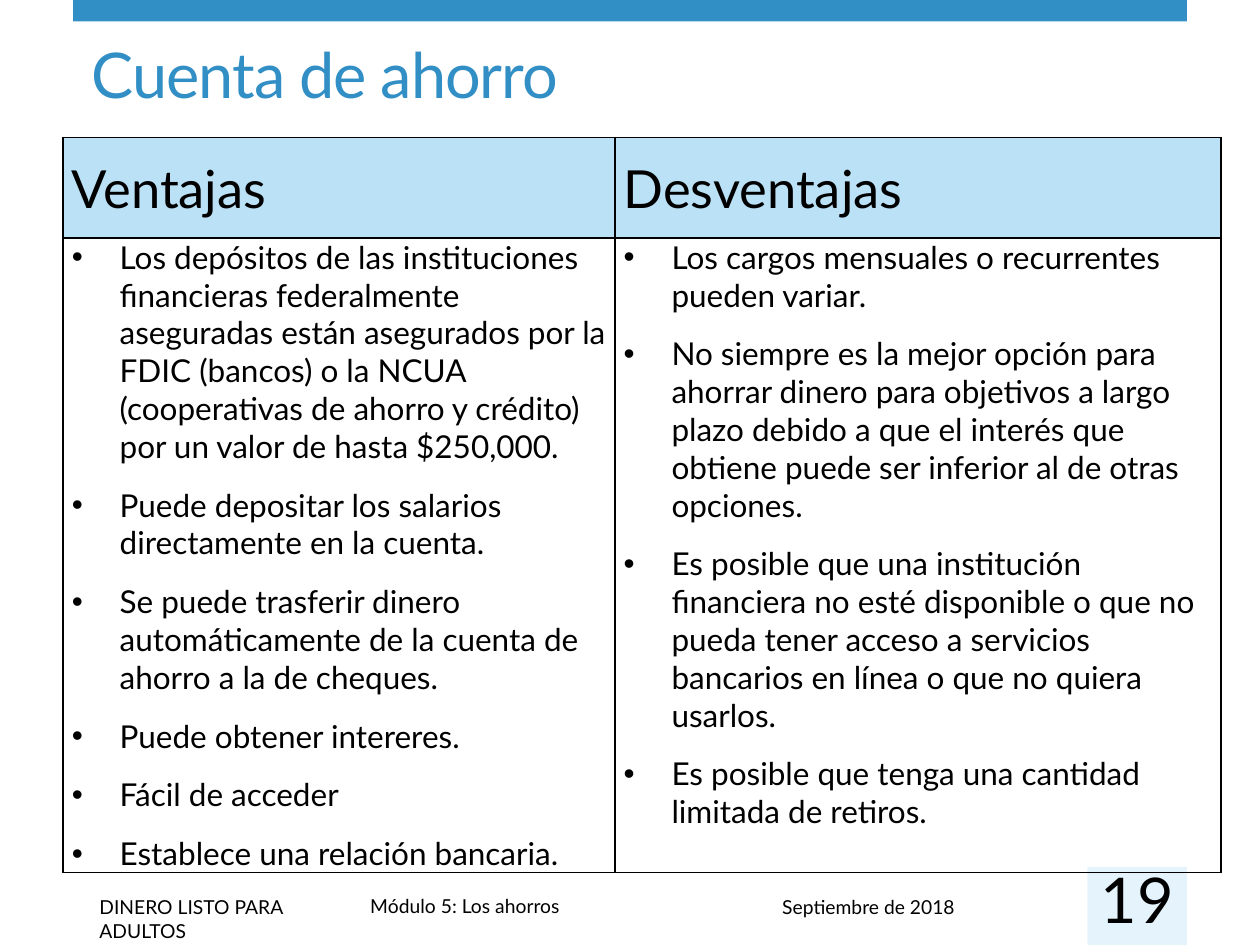
from lxml.etree import SubElement
from pptx import Presentation
from pptx.dml.color import RGBColor
from pptx.enum.shapes import MSO_SHAPE
from pptx.enum.text import MSO_ANCHOR, MSO_AUTO_SIZE, PP_ALIGN
from pptx.oxml.ns import qn
from pptx.util import Inches, Pt

FONT = "Lato"
BLUE, PALE, HEAD, BLACK = "318FC5", "E4F3FC", "76C5EF", "000000"
WIDE, HIGH = 10, 7.5
EDGE = 0.58          # side margin of the top bar
BADGE = 0.79         # width of the page number block
PAGE = WIDE - EDGE - BADGE

TITLE = "Cuenta de ahorro"
COLUMNS = [
    ("Ventajas", 4.38, [
        "Los depósitos de las instituciones financieras federalmente aseguradas "
        "están asegurados por la FDIC (bancos) o la NCUA (cooperativas de ahorro "
        "y crédito) por un valor de hasta $250,000.",
        "Puede depositar los salarios directamente en la cuenta.",
        "Se puede trasferir dinero automáticamente de la cuenta de ahorro a la de cheques.",
        "Puede obtener intereres.",
        "Fácil de acceder",
        "Establece una relación bancaria.",
    ]),
    ("Desventajas", 4.81, [
        "Los cargos mensuales o recurrentes pueden variar.",
        "No siempre es la mejor opción para ahorrar dinero para objetivos a largo "
        "plazo debido a que el interés que obtiene puede ser inferior al de otras opciones.",
        "Es posible que una institución financiera no esté disponible o que no pueda "
        "tener acceso a servicios bancarios en línea o que no quiera usarlos.",
        "Es posible que tenga una cantidad limitada de retiros.",
    ]),
]
ROWS = (0.8, 4.94)
FOOTER = [  # text, left, top, width
    ("DINERO LISTO PARA ADULTOS", 0.69, 7.06, 2.09),
    ("Módulo\u00a05: Los ahorros", 2.84, 7.05, 5.66),
    ("Septiembre de 2018", 6.11, 7.06, 2.52),
]


def color(code):
    return RGBColor.from_string(code)


def style(para, size, code=BLACK):
    font = para.font
    font.name, font.size, font.bold = FONT, Pt(size), False
    font.color.rgb = color(code)


def box(slide, left, top, width, height, code):
    shape = slide.shapes.add_shape(MSO_SHAPE.RECTANGLE, *map(Inches, (left, top, width, height)))
    shape.shadow.inherit = False
    shape.fill.solid()
    shape.fill.fore_color.rgb = color(code)
    shape.line.fill.background()


def label(slide, text, left, top, width, height, size):
    frame = slide.shapes.add_textbox(*map(Inches, (left, top, width, height))).text_frame
    frame.word_wrap = True
    frame.text = text
    style(frame.paragraphs[0], size)
    return frame


def bullet(para):
    props = para._p.get_or_add_pPr()
    indent = Inches(0.38)
    props.set("marL", str(indent))
    props.set("indent", str(-indent))
    para.space_after = Pt(12)
    SubElement(props, qn("a:buFont"), typeface="Arial")
    SubElement(props, qn("a:buChar"), char="•")
    tabs = SubElement(props, qn("a:tabLst"))
    SubElement(tabs, qn("a:tab"), pos=str(Inches(0.5)), algn="l")


def border(cell):
    props = cell._tc.get_or_add_tcPr()
    for side in ("lnL", "lnR", "lnT", "lnB"):
        line = SubElement(props, qn(f"a:{side}"), w=str(Pt(1)))
        fill = SubElement(line, qn("a:solidFill"))
        SubElement(fill, qn("a:srgbClr"), val=BLACK)


def prepare(cell):
    cell.margin_left = cell.margin_right = Inches(0.07)
    cell.margin_top = cell.margin_bottom = 0
    border(cell)


def header(cell, text):
    prepare(cell)
    cell.vertical_anchor = MSO_ANCHOR.MIDDLE
    cell.fill.solid()
    cell.fill.fore_color.rgb = color(HEAD)
    tint = cell._tc.tcPr.find(f"{qn('a:solidFill')}/{qn('a:srgbClr')}")
    SubElement(tint, qn("a:alpha"), val="50000")
    cell.text = text
    style(cell.text_frame.paragraphs[0], 30)


def body(cell, points):
    prepare(cell)
    cell.fill.background()
    frame = cell.text_frame
    for i, point in enumerate(points):
        para = frame.add_paragraph() if i else frame.paragraphs[0]
        para.text = point
        bullet(para)
        style(para, 18)


def heading(slide):
    title = slide.shapes.title
    title.left, title.top, title.width, title.height = map(Inches, (0.63, 0.19, 8.2, 0.74))
    frame = title.text_frame
    frame.text = TITLE
    frame.auto_size = MSO_AUTO_SIZE.NONE
    frame.vertical_anchor = MSO_ANCHOR.BOTTOM
    para = frame.paragraphs[0]
    para.alignment = PP_ALIGN.LEFT
    style(para, 36, BLUE)
    para.runs[0].font._element.set("spc", "-60")


def compare(slide):
    width = sum(col[1] for col in COLUMNS)
    table = slide.shapes.add_table(
        len(ROWS), len(COLUMNS), *map(Inches, (0.5, 1.09, width, sum(ROWS)))).table
    table.first_row = table.horz_banding = False
    for row, height in zip(table.rows, ROWS):
        row.height = Inches(height)
    for i, (name, width, points) in enumerate(COLUMNS):
        table.columns[i].width = Inches(width)
        header(table.cell(0, i), name)
        body(table.cell(1, i), points)


def main():
    deck = Presentation()
    deck.slide_width, deck.slide_height = Inches(WIDE), Inches(HIGH)
    slide = deck.slides.add_slide(deck.slide_layouts[5])
    box(slide, EDGE, 0, WIDE - 2 * EDGE, 0.17, BLUE)
    box(slide, PAGE, 6.88, BADGE, HIGH - 6.88, PALE)
    for text, left, top, width in FOOTER:
        frame = label(slide, text, left, top, width, 0.29, 11)
        frame.auto_size = MSO_AUTO_SIZE.SHAPE_TO_FIT_TEXT
    heading(slide)
    compare(slide)
    number = label(slide, "19", PAGE, 6.83, BADGE, 0.45, 36)
    number.margin_left = number.margin_right = number.margin_top = number.margin_bottom = 0
    number.paragraphs[0].alignment = PP_ALIGN.CENTER
    deck.save("out.pptx")


if __name__ == "__main__":
    main()
